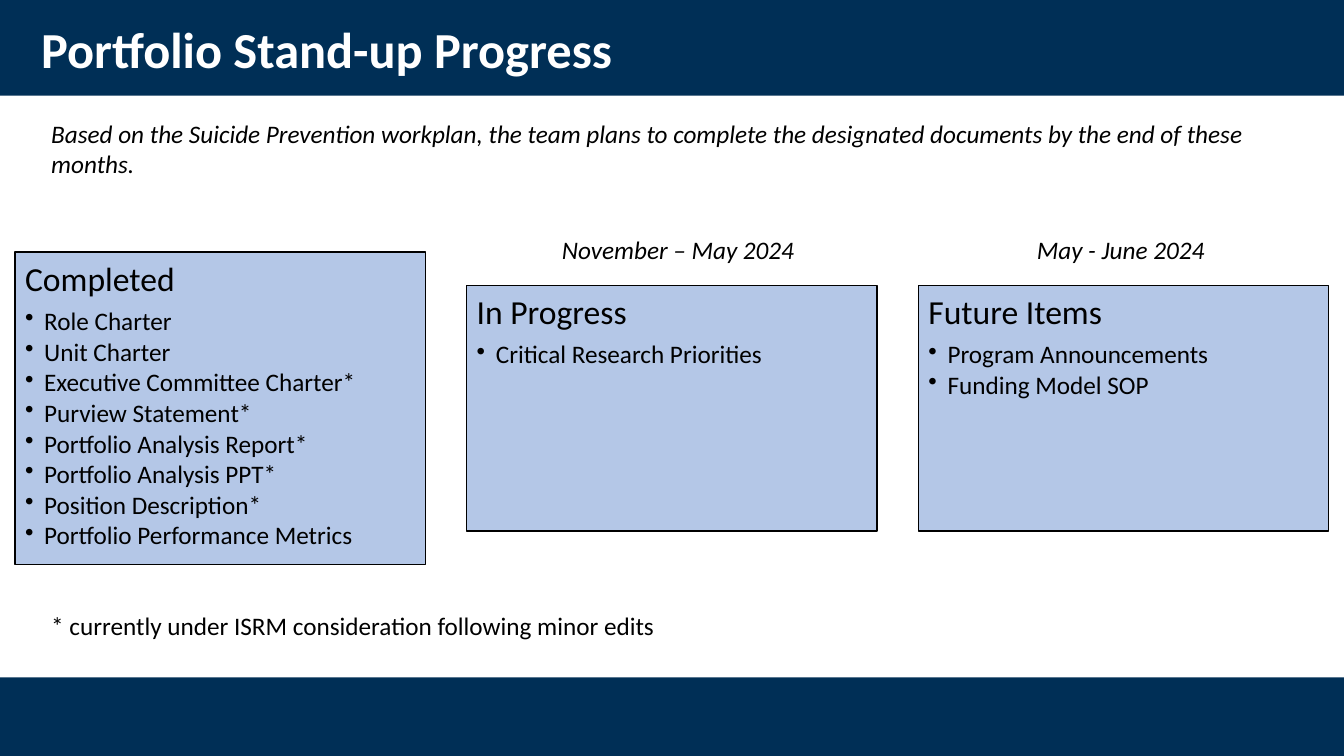
from pptx import Presentation
from pptx.dml.color import RGBColor
from pptx.enum.shapes import MSO_SHAPE
from pptx.enum.text import MSO_ANCHOR, PP_ALIGN
from pptx.oxml import parse_xml
from pptx.oxml.ns import nsdecls
from pptx.util import Inches, Pt

RECTANGLE = MSO_SHAPE.RECTANGLE
TOP, MIDDLE = MSO_ANCHOR.TOP, MSO_ANCHOR.MIDDLE
LEFT, CENTER = PP_ALIGN.LEFT, PP_ALIGN.CENTER
NAVY, PALE_BLUE, BLACK, WHITE = "002F56", "B4C7E7", "000000", "FFFFFF"

presentation = Presentation()
presentation.slide_width = Inches(13.33)
presentation.slide_height = Inches(7.5)
slide = presentation.slides.add_slide(presentation.slide_layouts[6])


def add_rectangle(left, top, width, height, fill, line=None):
    shape = slide.shapes.add_shape(
        RECTANGLE, Inches(left), Inches(top), Inches(width), Inches(height))
    shape.shadow.inherit = False
    shape.fill.solid()
    shape.fill.fore_color.rgb = RGBColor.from_string(fill)
    if line:
        shape.line.color.rgb = RGBColor.from_string(line)
        shape.line.width = Pt(1)
    else:
        shape.line.fill.background()
    return shape


def add_text(left, top, width, height, lines, size=18, color=BLACK, bold=False,
             italic=False, align=LEFT, anchor=TOP, spacing=1.0, inset=0.05,
             bullet_size=None):
    """Write lines in a box; with bullet_size, all but the first are bulleted."""
    box = slide.shapes.add_textbox(
        Inches(left), Inches(top), Inches(width), Inches(height))
    frame = box.text_frame
    frame.word_wrap = True
    frame.vertical_anchor = anchor
    frame.margin_left = frame.margin_right = Inches(0.1)
    frame.margin_top = frame.margin_bottom = Inches(inset)
    for index, line in enumerate(lines):
        paragraph = frame.add_paragraph() if index else frame.paragraphs[0]
        paragraph.alignment = align
        paragraph.line_spacing = spacing
        if bullet_size:
            paragraph.space_after = Pt(2.4 if index else 7.5)
        if index:
            paragraph.level = 1
            properties = paragraph._p.get_or_add_pPr()
            properties.set("marL", str(Inches(0.19)))
            properties.set("indent", str(Inches(-0.19)))
            properties.append(parse_xml(f'<a:buChar {nsdecls("a")} char="•"/>'))
        run = paragraph.add_run()
        run.text = line
        run.font.name = "Calibri"
        run.font.size = Pt(bullet_size if index else size)
        run.font.bold = bold
        run.font.italic = italic
        run.font.color.rgb = RGBColor.from_string(color)


# Header and footer bands with the title
add_rectangle(0, 0, 13.33, 0.95, NAVY)
add_rectangle(0, 6.72, 13.33, 0.78, NAVY)
add_text(0.31, 0.18, 11.5, 0.68, ["Portfolio Stand-up Progress"], size=36,
         color=WHITE, bold=True, anchor=MIDDLE, spacing=0.9)

# Status cards: top, height, heading and items
cards = [
    (2.5, 3.1, ["Completed", "Role Charter", "Unit Charter",
                "Executive Committee Charter*", "Purview Statement*",
                "Portfolio Analysis Report*", "Portfolio Analysis PPT*",
                "Position Description*", "Portfolio Performance Metrics"]),
    (2.83, 2.44, ["In Progress", "Critical Research Priorities"]),
    (2.83, 2.44, ["Future Items", "Program Announcements", "Funding Model SOP"]),
]
for column, (top, height, lines) in enumerate(cards):
    left = 0.15 + 4.48 * column
    add_rectangle(left, top, 4.07, height, PALE_BLUE, line=BLACK)
    add_text(left, top, 4.07, height, lines, size=24, bullet_size=18,
             spacing=0.9, inset=0.1)

# Introduction, card dates and footnote
add_text(0.41, 1.12, 12.7, 0.71,
         ["Based on the Suicide Prevention workplan, the team plans to complete "
          "the designated documents by the end of these months."], italic=True)
for left, date in [(5.19, "November – May 2024"), (9.58, "May - June 2024")]:
    add_text(left, 2.28, 3.07, 0.4, [date], italic=True, align=CENTER)
add_text(0.41, 6.01, 7.31, 0.4,
         ["* currently under ISRM consideration following minor edits"])

presentation.save("out.pptx")
